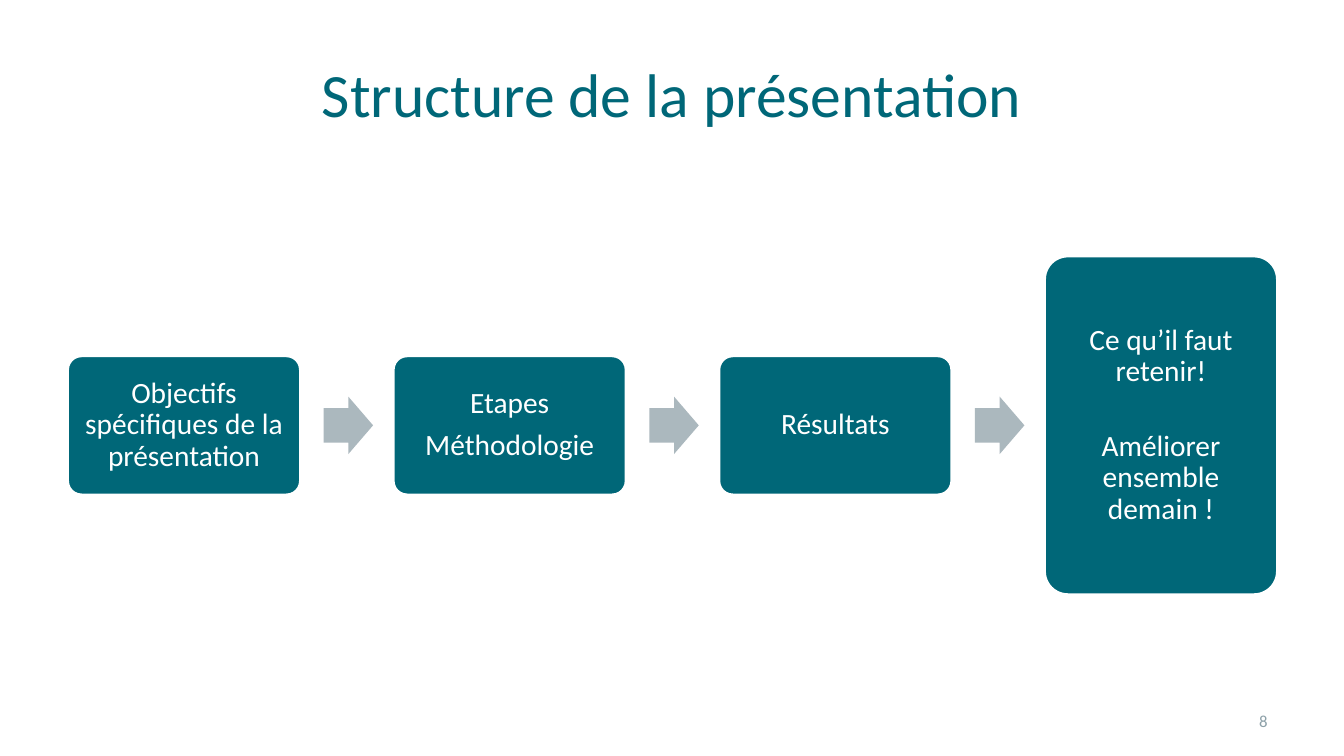
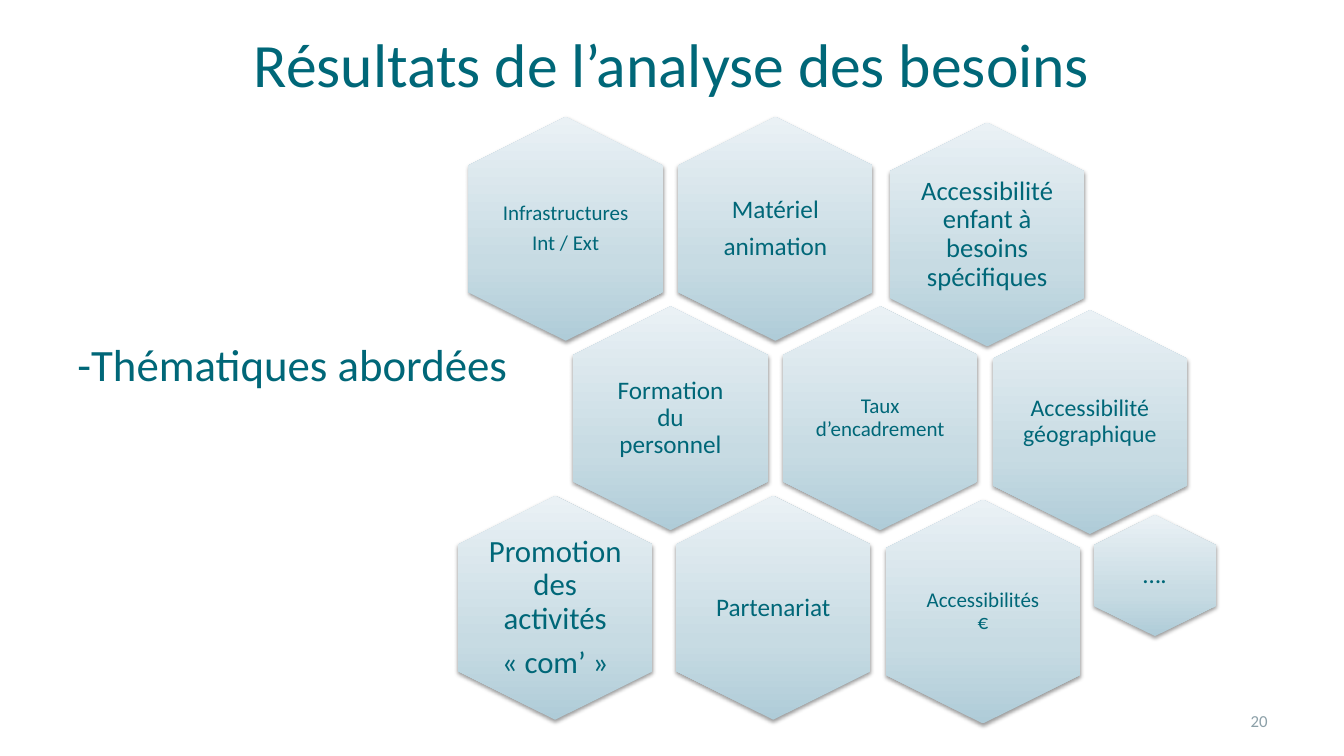
"""Build two slides: the outline of a talk and the themes of a needs analysis."""
from dataclasses import dataclass

from pptx import Presentation
from pptx.dml.color import RGBColor
from pptx.enum.shapes import MSO_SHAPE
from pptx.enum.text import MSO_ANCHOR, PP_ALIGN
from pptx.oxml import parse_xml
from pptx.oxml.ns import nsdecls
from pptx.util import Inches, Pt

TEAL = RGBColor(0x00, 0x67, 0x78)
WHITE = RGBColor(0xFF, 0xFF, 0xFF)
ARROW_GREY = RGBColor(0xAB, 0xB8, 0xBE)
NUMBER_GREY = RGBColor(0x8C, 0xA0, 0xA8)
GRADIENT = (
    (0, RGBColor(0xAF, 0xCC, 0xD8)),
    (35, RGBColor(0xC7, 0xDB, 0xE3)),
    (100, RGBColor(0xEA, 0xF1, 0xF5)),
)
FONT = "Calibri"

SLIDE_WIDTH, SLIDE_HEIGHT = 13.33, 7.5
MARGIN = 0.67
CONTENT_WIDTH = SLIDE_WIDTH - 2 * MARGIN
TITLE_HEIGHT = 1.25

STEP_WIDTH, STEP_PITCH, STEP_MIDDLE = 2.31, 3.23, 4.22
ARROW_WIDTH, ARROW_HEIGHT, ARROW_OFFSET = 0.49, 0.57, 2.54

HEXAGON_LEFT, HEXAGON_TOP = 5.61, 2.27
COLUMN_PITCH, ROW_PITCH = 2.08, 1.88
TEXT_SHARE = 0.69


@dataclass(frozen=True)
class Step:
    lines: tuple[str, ...]
    height: float = 1.38
    gap: float = 0


@dataclass(frozen=True)
class Theme:
    lines: tuple[str, ...]
    column: float
    row: float
    size: float = 18
    inset: float = 0
    length: float = 2.22
    breadth: float = 1.93


STEPS = (
    Step(("Objectifs spécifiques de la présentation",)),
    Step(("Etapes", "Méthodologie")),
    Step(("Résultats",)),
    Step(("Ce qu’il faut retenir!", "Améliorer ensemble demain !"), height=3.36, gap=23),
)

THEMES = (
    Theme(("Matériel", "animation"), 1, 0, inset=0.07),
    Theme(("Infrastructures", "Int / Ext"), 0, 0, size=15),
    Theme(("Formation du personnel",), 0.5, 1, inset=0.07),
    Theme(("Taux d’encadrement",), 1.5, 1, size=15),
    Theme(("Accessibilités €",), 1.99, 2.02, size=15, inset=0.06),
    Theme(("Accessibilité géographique",), 2.5, 1.02, size=17),
    Theme(("….",), 2.81, 1.83, inset=0.07, length=1.2, breadth=1.21),
    Theme(("Accessibilité enfant à besoins spécifiques",), 2.01, 0.03, size=19),
    Theme(("Partenariat",), 0.99, 2, inset=0.07),
    Theme(("Promotion des activités", "« com’ »"), -0.05, 2, size=22),
)


def frame(left: float, top: float, width: float, height: float) -> tuple:
    return Inches(left), Inches(top), Inches(width), Inches(height)


def centred(x: float, y: float, width: float, height: float) -> tuple:
    return frame(x - width / 2, y - height / 2, width, height)


def write(box, lines, *, size, color=TEAL, align=PP_ALIGN.CENTER, inset=None,
          spacing=None, after=0, gap=0) -> None:
    text = box.text_frame
    text.word_wrap = True
    text.vertical_anchor = MSO_ANCHOR.MIDDLE
    if inset is not None:
        text.margin_left = text.margin_right = Inches(inset)
        text.margin_top = text.margin_bottom = Inches(inset)
    for index, line in enumerate(lines):
        para = text.add_paragraph() if index else text.paragraphs[0]
        para.alignment = align
        para.line_spacing = spacing
        para.space_after = Pt(after)
        if index and gap:
            para.space_before = Pt(gap)
        span = para.add_run()
        span.text = line
        span.font.name = FONT
        span.font.size = Pt(size)
        span.font.color.rgb = color


def write_diagram(box, lines, size: float, **style) -> None:
    write(box, lines, size=size, spacing=0.9, after=size * 0.35, **style)


def add_page(deck, title: str, title_top: float, number: int):
    page = deck.slides.add_slide(deck.slide_layouts[5])
    heading = page.shapes.title
    heading.left, heading.top, heading.width, heading.height = frame(
        MARGIN, title_top, CONTENT_WIDTH, TITLE_HEIGHT)
    write(heading, [title], size=44)
    box = page.shapes.add_textbox(*frame(9.56, 6.95, 3.11, 0.4))
    write(box, [str(number)], size=12, color=NUMBER_GREY, align=PP_ALIGN.RIGHT)
    return page


def add_solid(page, kind, place: tuple, color: RGBColor):
    shape = page.shapes.add_shape(kind, *place)
    shape.shadow.inherit = False
    shape.fill.solid()
    shape.fill.fore_color.rgb = color
    shape.line.fill.background()
    return shape


def add_step(page, step: Step, left: float) -> None:
    place = frame(left, STEP_MIDDLE - step.height / 2, STEP_WIDTH, step.height)
    box = add_solid(page, MSO_SHAPE.ROUNDED_RECTANGLE, place, TEAL)
    box.adjustments[0] = 0.1
    box.line.color.rgb = WHITE
    box.line.width = Pt(2)
    write_diagram(box, step.lines, 21, color=WHITE, inset=0.09, gap=step.gap)


def add_arrow(page, left: float) -> None:
    place = frame(left, STEP_MIDDLE - ARROW_HEIGHT / 2, ARROW_WIDTH, ARROW_HEIGHT)
    arrow = add_solid(page, MSO_SHAPE.RIGHT_ARROW, place, ARROW_GREY)
    arrow.adjustments[0] = 0.6
    arrow.adjustments[1] = 0.5


def shade(shape) -> None:
    stops = "".join(
        f'<a:gs pos="{share * 1000}"><a:srgbClr val="{color}"/></a:gs>'
        for share, color in GRADIENT)
    properties = shape.element.spPr
    properties.append(parse_xml(
        f'<a:gradFill {nsdecls("a")} rotWithShape="0"><a:gsLst>{stops}</a:gsLst>'
        '<a:lin ang="16200000" scaled="0"/></a:gradFill>'))
    shape.line.fill.background()
    properties.append(parse_xml(
        f'<a:effectLst {nsdecls("a")}><a:outerShdw blurRad="{Pt(3.1)}" '
        f'dist="{Pt(1.6)}" dir="5400000" rotWithShape="0"><a:srgbClr val="000000">'
        '<a:alpha val="38000"/></a:srgbClr></a:outerShdw></a:effectLst>'))


def add_theme(page, theme: Theme) -> None:
    x = HEXAGON_LEFT + theme.column * COLUMN_PITCH
    y = HEXAGON_TOP + theme.row * ROW_PITCH
    hexagon = page.shapes.add_shape(
        MSO_SHAPE.HEXAGON, *centred(x, y, theme.length, theme.breadth))
    hexagon.adjustments[0] = 0.25
    hexagon.rotation = 90
    shade(hexagon)
    box = page.shapes.add_textbox(
        *centred(x, y, theme.breadth * TEXT_SHARE, theme.length * TEXT_SHARE))
    write_diagram(box, theme.lines, theme.size, inset=theme.inset)


def build_outline(deck) -> None:
    page = add_page(deck, "Structure de la présentation", 0.3, 8)
    for index, step in enumerate(STEPS):
        left = MARGIN + index * STEP_PITCH
        add_step(page, step, left)
        if index < len(STEPS) - 1:
            add_arrow(page, left + ARROW_OFFSET)


def build_themes(deck) -> None:
    page = add_page(deck, "Résultats de l’analyse des besoins", 0, 20)
    label = page.shapes.add_textbox(*frame(MARGIN, 3.31, 5, 0.6))
    write(label, ["-Thématiques abordées"], size=32, align=PP_ALIGN.LEFT)
    for theme in THEMES:
        add_theme(page, theme)


def main() -> None:
    deck = Presentation()
    deck.slide_width = Inches(SLIDE_WIDTH)
    deck.slide_height = Inches(SLIDE_HEIGHT)
    build_outline(deck)
    build_themes(deck)
    deck.save("out.pptx")


if __name__ == "__main__":
    main()
